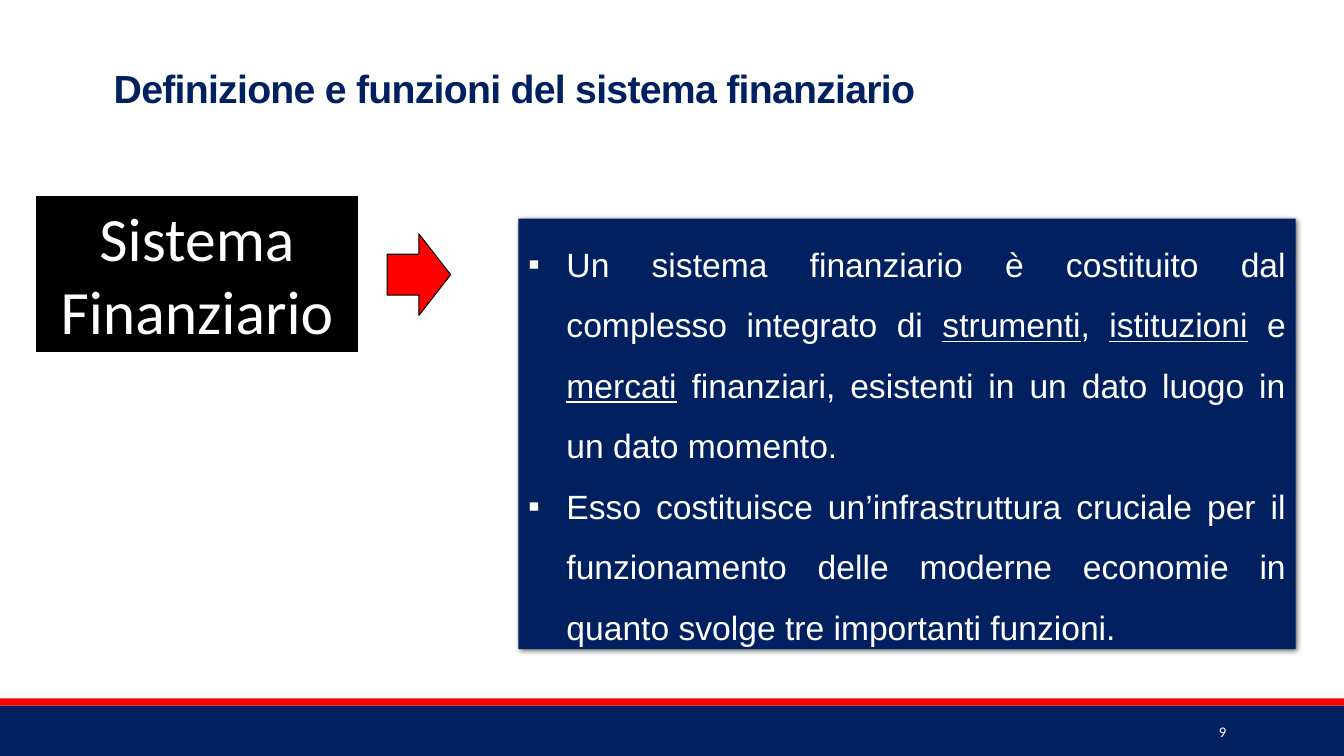
from lxml.etree import SubElement
from pptx import Presentation
from pptx.dml.color import RGBColor
from pptx.enum.shapes import MSO_SHAPE
from pptx.enum.text import MSO_ANCHOR, PP_ALIGN
from pptx.oxml.ns import qn
from pptx.util import Pt

PX = 9144  # one px is a hundredth of an inch
NAVY, RED, BLACK, WHITE = "002060", "FF0000", "000000", "FFFFFF"

DEFINITION = [
    [("Un sistema finanziario è costituito dal complesso integrato di ", False),
     ("strumenti", True), (", ", False), ("istituzioni", True), (" e ", False),
     ("mercati", True),
     (" finanziari, esistenti in un dato luogo in un dato momento.", False)],
    [("Esso costituisce un’infrastruttura cruciale per il funzionamento delle "
      "moderne economie in quanto svolge tre importanti funzioni.", False)],
]


def color(value):
    return RGBColor.from_string(value)


def emu(box):
    return [length * PX for length in box]


def add_block(page, box, fill, kind=MSO_SHAPE.RECTANGLE, line=None, width=1):
    block = page.shapes.add_shape(kind, *emu(box))
    block.shadow.inherit = False
    block.fill.solid()
    block.fill.fore_color.rgb = color(fill)
    if line:
        block.line.color.rgb = color(line)
        block.line.width = Pt(width)
    else:
        block.line.fill.background()
    return block


def add_span(para, text, font_color, **format_values):
    span = para.add_run()
    span.text = text
    for name, value in format_values.items():
        setattr(span.font, name, value)
    span.font.color.rgb = color(font_color)
    return span


def set_frame(shape, anchor):
    frame = shape.text_frame
    frame.word_wrap = True
    frame.vertical_anchor = anchor
    return frame


def add_bullet(para, indent):
    props = para._p.get_or_add_pPr()
    props.set("marL", str(indent * PX))
    props.set("indent", str(-indent * PX))
    SubElement(props, qn("a:buFont"), typeface="Arial")
    SubElement(props, qn("a:buChar"), char="▪")


def add_soft_shadow(shape):
    effects = shape._element.spPr.find(qn("a:effectLst"))
    shadow = SubElement(effects, qn("a:outerShdw"), blurRad=str(Pt(3.5)),
                        dist=str(Pt(2)), dir=str(45 * 60000), algn="tl",
                        rotWithShape="0")
    tint = SubElement(shadow, qn("a:srgbClr"), val=BLACK)
    SubElement(tint, qn("a:alpha"), val="60000")


def add_footer(page, box, number):
    left, top, width, height = box
    stripe = 7
    add_block(page, (left, top + stripe, width, height - stripe), NAVY)
    add_block(page, (left, top, width, stripe), RED)
    # Page number
    label = page.shapes.add_textbox(*emu((left + 1083, top + 13, 143, 40)))
    para = set_frame(label, MSO_ANCHOR.MIDDLE).paragraphs[0]
    para.alignment = PP_ALIGN.RIGHT
    add_span(para, number, WHITE, name="Calibri", size=Pt(10.5))


def add_title(page, box, text):
    title = page.shapes.add_textbox(*emu(box))
    para = set_frame(title, MSO_ANCHOR.BOTTOM).paragraphs[0]
    para.line_spacing = 0.85
    span = add_span(para, text, NAVY, name="Arial", size=Pt(28), bold=True)
    span.font._element.set("spc", "-50")


def add_term(page, box, text):
    term = add_block(page, box, BLACK, line=WHITE, width=2)
    para = set_frame(term, MSO_ANCHOR.TOP).paragraphs[0]
    para.alignment = PP_ALIGN.CENTER
    add_span(para, text, WHITE, name="Calibri", size=Pt(44))


def add_definition(page, box, points):
    panel = add_block(page, box, NAVY)
    add_soft_shadow(panel)
    frame = set_frame(panel, MSO_ANCHOR.TOP)
    for index, point in enumerate(points):
        para = frame.add_paragraph() if index else frame.paragraphs[0]
        para.alignment = PP_ALIGN.JUSTIFY
        para.line_spacing = 1.5
        add_bullet(para, 38)
        for text, underline in point:
            add_span(para, text, WHITE, name="Arial", size=Pt(24),
                     underline=underline)


def main():
    deck = Presentation()
    deck.slide_width, deck.slide_height = emu((1333, 750))
    page = deck.slides.add_slide(deck.slide_layouts[6])
    add_footer(page, (0, 693, 1333, 57), "9")
    add_title(page, (103, 47, 1230, 69),
              "Definizione e funzioni del sistema finanziario")
    add_term(page, (34, 193, 323, 158), "Sistema Finanziario")
    add_definition(page, (514, 217, 771, 427), DEFINITION)
    # Arrow from the term to its definition
    add_block(page, (384, 232, 63, 81), RED, MSO_SHAPE.RIGHT_ARROW, BLACK, 0.75)
    deck.save("out.pptx")


if __name__ == "__main__":
    main()
